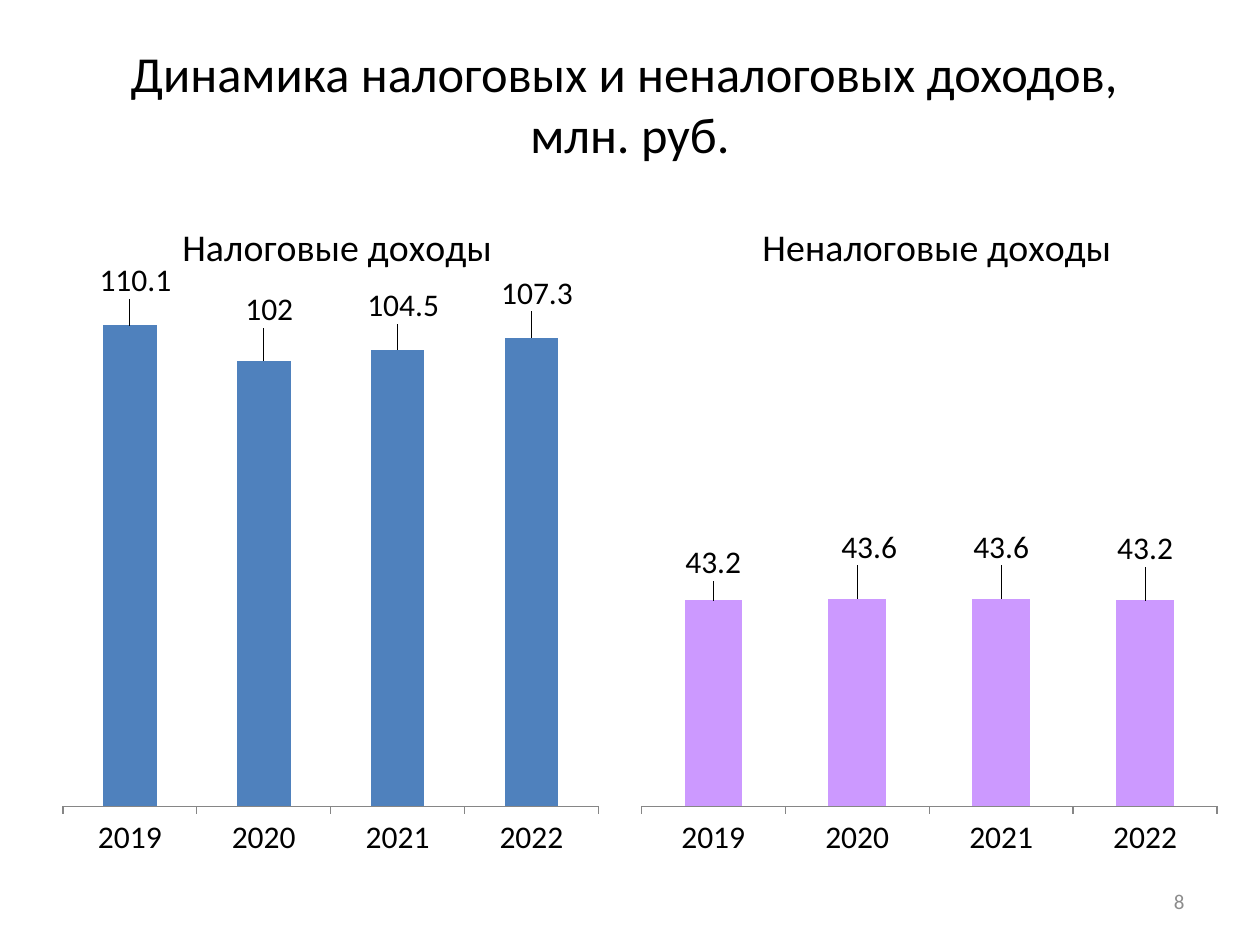
from lxml.etree import SubElement
from pptx import Presentation
from pptx.chart.data import CategoryChartData
from pptx.dml.color import RGBColor
from pptx.enum.chart import XL_CHART_TYPE, XL_LABEL_POSITION, XL_TICK_MARK
from pptx.enum.text import MSO_ANCHOR, MSO_AUTO_SIZE, PP_ALIGN
from pptx.oxml.ns import qn
from pptx.util import Inches, Pt

COLOURS = {"text": "000000", "number": "8C8C8C", "axis": "868686",
           "tax": "4F81BD", "nontax": "CC99FF"}
FONT = "Calibri"
YEARS = ["2019", "2020", "2021", "2022"]
CHART_TOP, CHART_HEIGHT = 1.42, 5.5
PLOT_TOP, PLOT_BOTTOM = 2.24, 6.4
REVENUES = [
    {"heading": "Налоговые доходы", "values": [110.1, 102, 104.5, 107.3],
     "colour": "tax", "maximum": 120, "left": 0.42, "width": 4.42,
     "heading_at": (0.22, 0.05), "plot_span": (0.5, 4.75),
     "shifts": [(0.01, -0.03), (0.01, -0.04), (0.01, -0.03), (0.01, -0.03)]},
    {"heading": "Неналоговые доходы", "values": [43.2, 43.6, 43.6, 43.2],
     "colour": "nontax", "maximum": 110, "left": 5, "width": 4.75,
     "heading_at": (0.21, 0.05), "plot_span": (5.09, 9.66),
     "shifts": [(0, -0.02), (0.02, -0.04), (0, -0.04), (0, -0.04)]},
]


def colour(key):
    return RGBColor.from_string(COLOURS[key])


def apply(target, formats):
    for name, value in formats.items():
        setattr(target, name, value)


def format_font(font, size, key="text"):
    apply(font, {"name": FONT, "size": Pt(size), "bold": False})
    font.color.rgb = colour(key)


def fill_text(holder, box, words, size, key, align):
    apply(holder, dict(zip(("left", "top", "width", "height"), map(Inches, box))))
    frame = holder.text_frame
    apply(frame, {"text": words, "word_wrap": True,
                  "auto_size": MSO_AUTO_SIZE.NONE,
                  "vertical_anchor": MSO_ANCHOR.MIDDLE})
    for paragraph in frame.paragraphs:
        paragraph.alignment = align
        for run in paragraph.runs:
            format_font(run.font, size, key)


def set_layout(parent, after, settings):
    for old in parent.findall(qn("c:layout")):
        parent.remove(old)
    layout = SubElement(parent, qn("c:layout"))
    manual = SubElement(layout, qn("c:manualLayout"))
    for tag, value in settings.items():
        SubElement(manual, qn("c:" + tag)).set("val", str(value))
    if after is None:
        parent.insert(0, layout)
    else:
        after.addnext(layout)


def add_revenue_chart(slide, box, revenue):
    left, top, width, height = box
    table = CategoryChartData()
    table.categories = YEARS
    table.add_series("Series 1", revenue["values"])
    chart = slide.shapes.add_chart(XL_CHART_TYPE.COLUMN_CLUSTERED,
                                   *map(Inches, box), table).chart
    chart.has_legend = False
    format_font(chart.font, 18)

    chart.has_title = True
    heading = chart.chart_title
    heading.text_frame.text = revenue["heading"]
    format_font(heading.text_frame.paragraphs[0].runs[0].font, 21.6)
    heading.include_in_layout = False
    x, y = revenue["heading_at"]
    title_xml = chart._chartSpace.chart.find(qn("c:title"))
    set_layout(title_xml, title_xml.find(qn("c:tx")),
               {"xMode": "edge", "yMode": "edge", "x": x, "y": y})

    start, end = revenue["plot_span"]
    set_layout(chart._chartSpace.chart.plotArea, None, {
        "layoutTarget": "inner", "xMode": "edge", "yMode": "edge",
        "x": (start - left) / width, "y": (PLOT_TOP - top) / height,
        "w": (end - start) / width, "h": (PLOT_BOTTOM - PLOT_TOP) / height})

    apply(chart.value_axis, {"minimum_scale": 0, "visible": False,
                             "maximum_scale": revenue["maximum"],
                             "has_major_gridlines": False})
    apply(chart.category_axis, {"major_tick_mark": XL_TICK_MARK.OUTSIDE,
                                "minor_tick_mark": XL_TICK_MARK.NONE})
    chart.category_axis.format.line.color.rgb = colour("axis")

    plot = chart.plots[0]
    apply(plot, {"gap_width": 150, "vary_by_categories": False,
                 "has_data_labels": True})
    plot.data_labels.show_value = True
    series = plot.series[0]
    series.format.fill.solid()
    series.format.fill.fore_color.rgb = colour(revenue["colour"])
    for index in range(len(YEARS)):
        label = series.points[index].data_label
        label.position = XL_LABEL_POSITION.OUTSIDE_END
        format_font(label.font, 18)
    for label_xml, (x, y) in zip(series._element.xpath(".//c:dLbl"),
                                 revenue["shifts"]):
        set_layout(label_xml, label_xml.find(qn("c:idx")), {"x": x, "y": y})


def main():
    deck = Presentation()
    apply(deck, {"slide_width": Inches(10), "slide_height": Inches(7.5)})
    slide = deck.slides.add_slide(deck.slide_layouts[5])
    fill_text(slide.shapes.title, (0.5, 0.3, 9, 1.03),
              "Динамика налоговых и неналоговых доходов, \vмлн. руб.",
              28.8, "text", PP_ALIGN.CENTER)
    for revenue in REVENUES:
        add_revenue_chart(slide, (revenue["left"], CHART_TOP,
                                  revenue["width"], CHART_HEIGHT), revenue)
    number = slide.shapes.add_textbox(0, 0, 0, 0)
    fill_text(number, (7.17, 6.95, 2.33, 0.4), "8", 12, "number", PP_ALIGN.RIGHT)
    deck.save("out.pptx")


if __name__ == "__main__":
    main()
